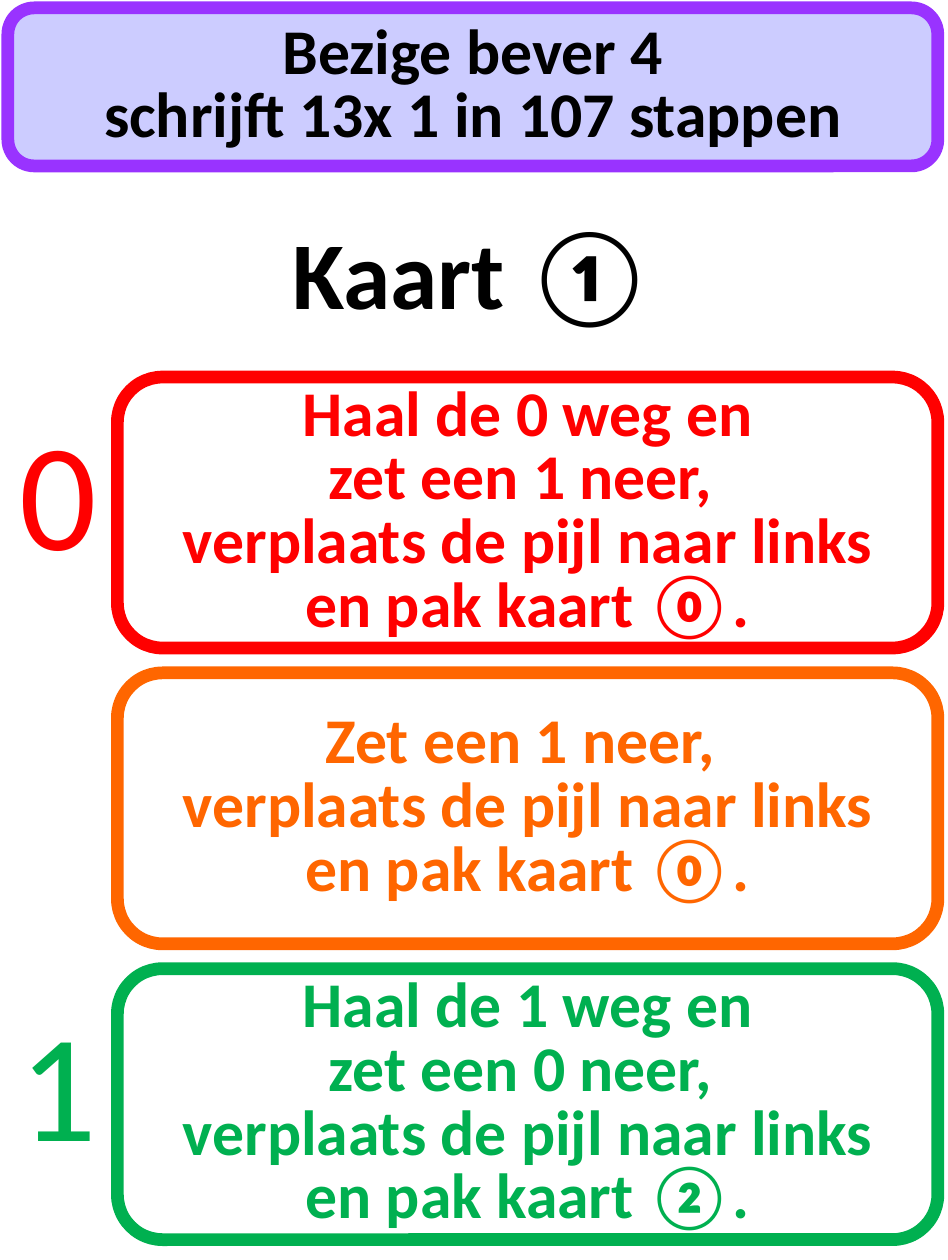
from dataclasses import dataclass

from pptx import Presentation
from pptx.dml.color import RGBColor
from pptx.enum.shapes import MSO_SHAPE
from pptx.enum.text import MSO_ANCHOR, MSO_AUTO_SIZE, PP_ALIGN
from pptx.util import Emu, Pt

ROUNDED = MSO_SHAPE.ROUNDED_RECTANGLE
MIDDLE = MSO_ANCHOR.MIDDLE
NO_FIT = MSO_AUTO_SIZE.NONE
GROW = MSO_AUTO_SIZE.SHAPE_TO_FIT_TEXT
CENTER = PP_ALIGN.CENTER
LEFT = PP_ALIGN.LEFT

EMU_PER_PX = 9000
TITLE_ONLY = 5


@dataclass(frozen=True)
class Theme:
    font: str = "Calibri"
    ink: str = "000000"
    header_fill: str = "CCCCFF"
    header_line: str = "9933FF"
    zero: str = "FF0000"
    blank: str = "FF6600"
    one: str = "00B050"
    border: int = 8
    body: int = 40
    title: int = 60
    digit: int = 96


THEME = Theme()

PAGE_WIDTH, PAGE_HEIGHT = 840, 1116
HEADER_BOX = (7, 7, 824, 140)
TITLE_BOX = (7, 170, 824, 140)
CARD_LEFT, CARD_TOP, CARD_WIDTH, CARD_HEIGHT = 104, 334, 727, 240
CARD_STEP = 262
DIGIT_LEFT, DIGIT_DROP = 7, 13

HEADER = "Bezige bever 4\nschrijft 13x 1 in 107 stappen"
TITLE = "Kaart ①"
MOVE = "verplaats de pijl naar links\nen pak kaart "
RULES = [
    ("0", (92, 209), "Haal de 0 weg en\nzet een 1 neer, \n" + MOVE + "⓪.", THEME.zero),
    ("", None, "Zet een 1 neer, \n" + MOVE + "⓪.", THEME.blank),
    ("1", (89, 175), "Haal de 1 weg en\nzet een 0 neer, \n" + MOVE + "②.", THEME.one),
]


def px(length):
    return Emu(length * EMU_PER_PX)


def apply(target, values):
    for name, value in values.items():
        setattr(target, name, value)


def write(holder, wording, size, color, bold=True, align=CENTER, spacing=None, frame_format=None):
    frame = holder.text_frame
    apply(frame, frame_format or {
        "word_wrap": True, "auto_size": NO_FIT, "vertical_anchor": MIDDLE,
    })
    paragraph = frame.paragraphs[0]
    paragraph.text = wording
    apply(paragraph, {"alignment": align, "line_spacing": spacing})
    for run in paragraph.runs:
        apply(run.font, {"name": THEME.font, "size": Pt(size), "bold": bold})
        run.font.color.rgb = RGBColor.from_string(color)


def add_panel(slide, box, wording, line, color, fill=None):
    panel = slide.shapes.add_shape(ROUNDED, *map(px, box))
    panel.shadow.inherit = False
    if fill:
        panel.fill.solid()
        panel.fill.fore_color.rgb = RGBColor.from_string(fill)
    else:
        panel.fill.background()
    panel.line.color.rgb = RGBColor.from_string(line)
    panel.line.width = Pt(THEME.border)
    write(panel, wording, THEME.body, color, spacing=Pt(THEME.body))


def add_digit(slide, top, extent, digit, color):
    label = slide.shapes.add_textbox(*map(px, (DIGIT_LEFT, top, *extent)))
    write(label, digit, THEME.digit, color, bold=False, align=LEFT,
          frame_format={"word_wrap": False, "auto_size": GROW})


def set_title(slide):
    title = slide.shapes.title
    apply(title, dict(zip(("left", "top", "width", "height"), map(px, TITLE_BOX))))
    write(title, TITLE, THEME.title, THEME.ink)


def main():
    deck = Presentation()
    deck.slide_width = px(PAGE_WIDTH)
    deck.slide_height = px(PAGE_HEIGHT)
    deck.element.sldSz.attrib.pop("type", None)
    slide = deck.slides.add_slide(deck.slide_layouts[TITLE_ONLY])
    set_title(slide)
    for row, (digit, extent, instruction, color) in enumerate(RULES):
        top = CARD_TOP + row * CARD_STEP
        add_panel(slide, (CARD_LEFT, top, CARD_WIDTH, CARD_HEIGHT), instruction, color, color)
        if digit:
            add_digit(slide, top + DIGIT_DROP, extent, digit, color)
    add_panel(slide, HEADER_BOX, HEADER, THEME.header_line, THEME.ink, THEME.header_fill)
    deck.save("out.pptx")


if __name__ == "__main__":
    main()
